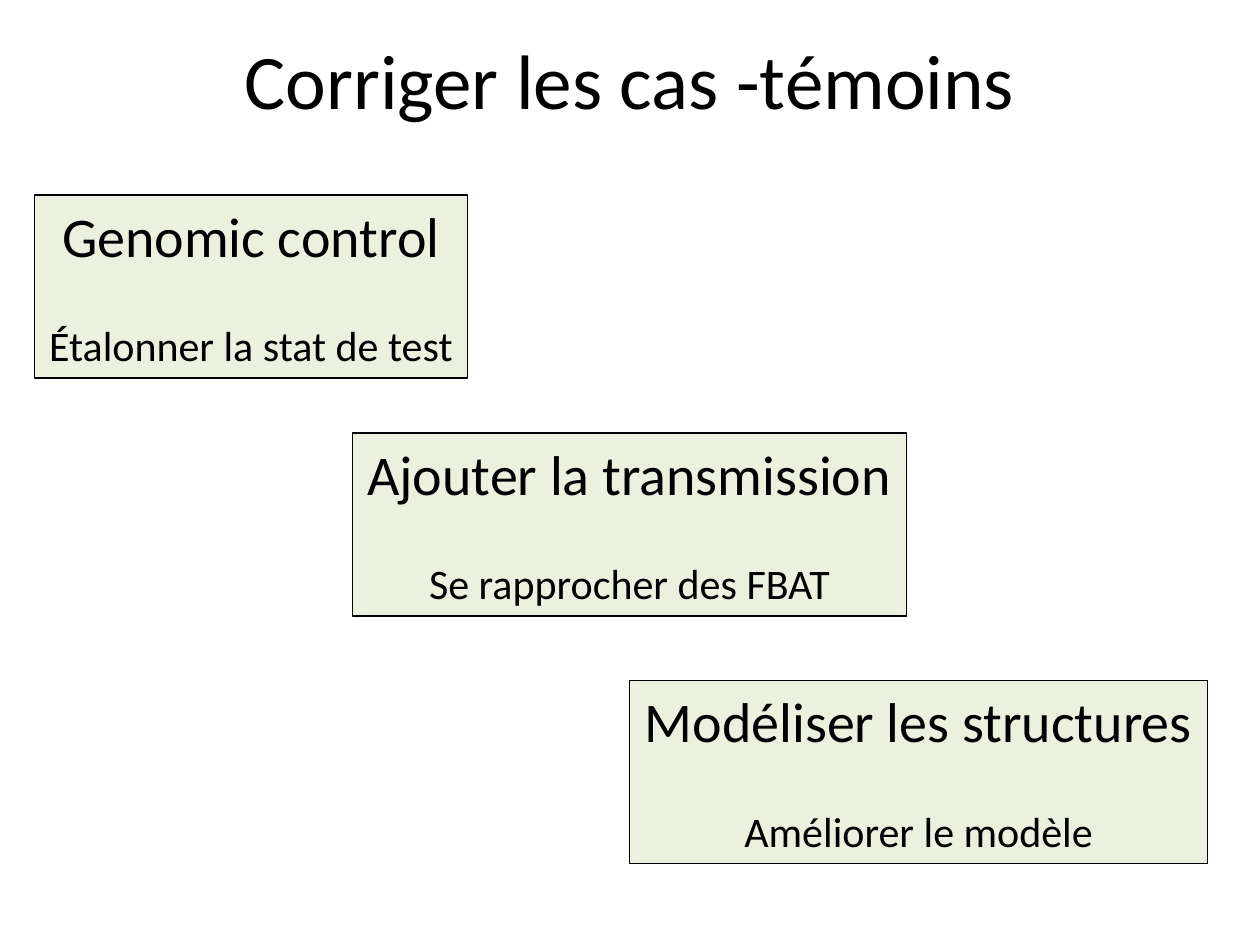
"""Build a slide with three stepped boxes on ways to correct case-control studies."""
from dataclasses import dataclass

from pptx import Presentation
from pptx.dml.color import RGBColor
from pptx.enum.shapes import MSO_SHAPE
from pptx.enum.text import MSO_ANCHOR, MSO_AUTO_SIZE, PP_ALIGN
from pptx.util import Cm, Pt

RECTANGLE = MSO_SHAPE.RECTANGLE
TOP, MIDDLE = MSO_ANCHOR.TOP, MSO_ANCHOR.MIDDLE
GROW = MSO_AUTO_SIZE.SHAPE_TO_FIT_TEXT
CENTER = PP_ALIGN.CENTER
FONT = "Calibri"
BLACK, PALE_GREEN = "000000", "EBF1DE"
BOX_HEIGHT = 3.69


@dataclass(frozen=True)
class Approach:
    heading: str
    aim: str
    left: float
    top: float
    width: float


APPROACHES = (
    Approach("Genomic control", "Étalonner la stat de test", 0.7, 3.93, 8.72),
    Approach("Ajouter la transmission", "Se rapprocher des FBAT", 7.1, 8.73, 11.18),
    Approach("Modéliser les structures", "Améliorer le modèle", 12.69, 13.72, 11.66),
)


def color(value: str) -> RGBColor:
    return RGBColor.from_string(value)


def write(paragraph, text: str, *, size: float, before: float = 0) -> None:
    paragraph.alignment = CENTER
    paragraph.space_before = Pt(before)
    run = paragraph.add_run()
    run.text = text
    run.font.name = FONT
    run.font.size = Pt(size)
    run.font.color.rgb = color(BLACK)


def draw_title(slide, text: str) -> None:
    title = slide.shapes.add_textbox(Cm(1.27), Cm(0.76), Cm(22.86), Cm(3.18))
    frame = title.text_frame
    frame.word_wrap = True
    frame.vertical_anchor = MIDDLE
    frame.margin_top, frame.margin_bottom = Cm(0), Cm(1.52)
    write(frame.paragraphs[0], text, size=44.1)


def draw_approach(slide, approach: Approach) -> None:
    box = slide.shapes.add_shape(
        RECTANGLE, Cm(approach.left), Cm(approach.top), Cm(approach.width), Cm(BOX_HEIGHT)
    )
    box.shadow.inherit = False
    box.fill.solid()
    box.fill.fore_color.rgb = color(PALE_GREEN)
    box.line.color.rgb = color(BLACK)
    box.line.width = Pt(0.75)
    frame = box.text_frame
    frame.word_wrap = False
    frame.auto_size = GROW
    frame.vertical_anchor = TOP
    write(frame.paragraphs[0], approach.heading, size=32)
    write(frame.add_paragraph(), approach.aim, size=24, before=29.3)


def main() -> None:
    deck = Presentation()
    deck.slide_width, deck.slide_height = Cm(25.4), Cm(19.05)
    slide = deck.slides.add_slide(deck.slide_layouts[6])
    draw_title(slide, "Corriger les cas -témoins")
    for approach in APPROACHES:
        draw_approach(slide, approach)
    deck.save("out.pptx")


if __name__ == "__main__":
    main()
